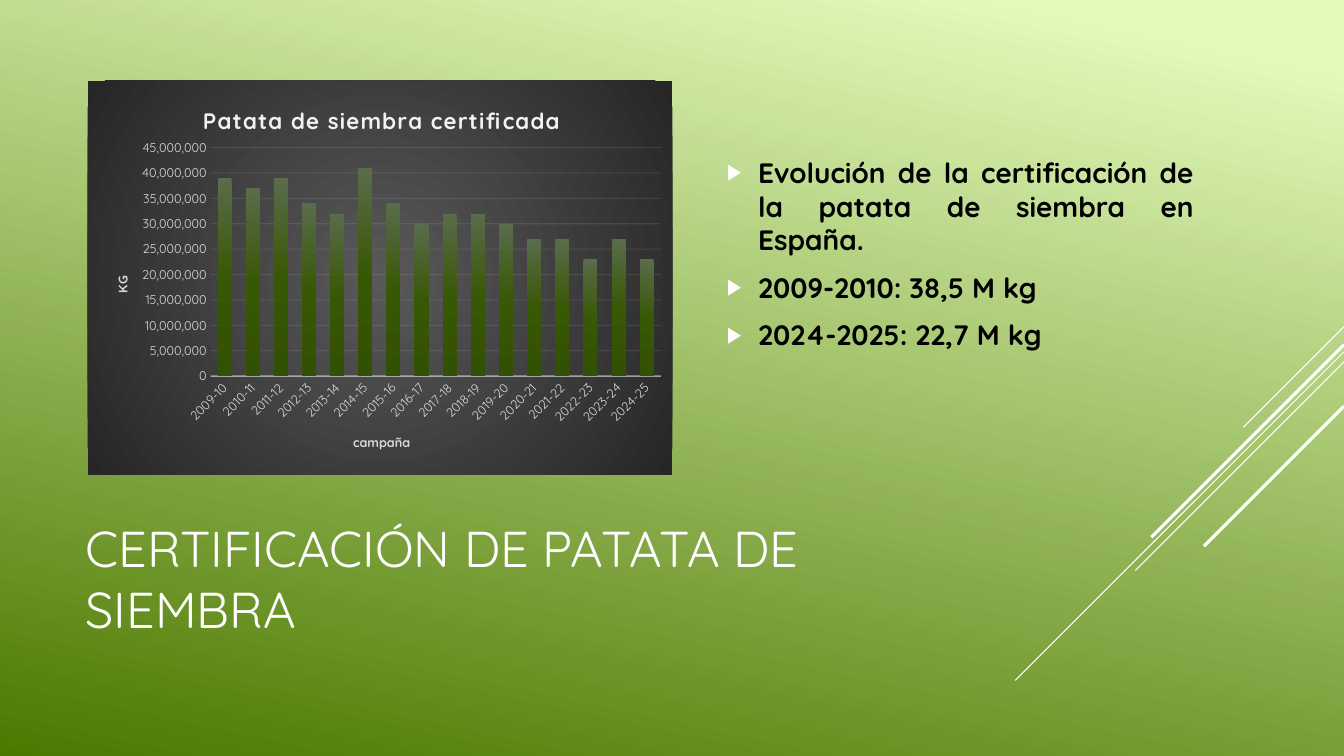
from lxml import etree
from pptx import Presentation
from pptx.chart.data import CategoryChartData
from pptx.dml.color import RGBColor
from pptx.enum.chart import XL_CHART_TYPE, XL_TICK_MARK
from pptx.enum.shapes import MSO_CONNECTOR
from pptx.enum.text import MSO_ANCHOR, MSO_AUTO_SIZE, PP_ALIGN
from pptx.oxml import parse_xml
from pptx.oxml.ns import nsdecls, qn
from pptx.util import Inches, Pt

COLUMNS = XL_CHART_TYPE.COLUMN_CLUSTERED
NO_TICK = XL_TICK_MARK.NONE
STRAIGHT = MSO_CONNECTOR.STRAIGHT
MIDDLE = MSO_ANCHOR.MIDDLE
NO_FIT = MSO_AUTO_SIZE.NONE
LEFT, JUSTIFY = PP_ALIGN.LEFT, PP_ALIGN.JUSTIFY

FONT = "Quicksand"
COLORS = {
    "white": "FFFFFF", "black": "000000", "pale": "F2F2F2", "label": "D9D9D9",
    "lime": "E2F9BA", "green": "4C7800", "gray": "595959", "charcoal": "262626",
    "bar_top": "5A6C4B", "bar_middle": "395806", "bar_bottom": "335102",
}
SLIDE_WIDTH = 13.33
DIAGONALS = [(3.24, 1.0, 0.75), (3.49, 3.26, 0.75), (3.59, 2.07, 0.75),
             (3.42, 1.91, 2.25), (4.03, 1.39, 2.25)]
BULLETS = ["Evolución de la certificación de la patata de siembra en España.",
           "2009-2010: 38,5 M kg", "2024-2025: 22,7 M kg"]
MILLIONS = [39, 37, 39, 34, 32, 41, 34, 30, 32, 32, 30, 27, 27, 23, 27, 23]


def rgb(name):
    """Return a named colour."""
    return RGBColor.from_string(COLORS[name])


def style_font(font, size, color, bold=False):
    """Set the typeface, size, colour and weight of a font."""
    font.name, font.size, font.bold = FONT, Pt(size), bold
    font.color.rgb = rgb(color)


def style_line(line, color, width, alpha):
    """Set a line's colour, width and opacity in percent."""
    line.color.rgb = rgb(color)
    line.width = Pt(width)
    tint = line._get_or_add_ln().find(".//" + qn("a:srgbClr"))
    etree.SubElement(tint, qn("a:alpha"), val=str(alpha * 1000))


def gradient(stops, shade):
    """Build a gradient fill from position and colour pairs."""
    marks = "".join(f'<a:gs pos="{position * 1000}"><a:srgbClr val="{COLORS[name]}"/></a:gs>'
                    for position, name in stops)
    return parse_xml(f'<a:gradFill {nsdecls("a")} rotWithShape="1">'
                     f"<a:gsLst>{marks}</a:gsLst>{shade}</a:gradFill>")


def paint_background(page):
    """Fill the slide with the green gradient."""
    fill = page.background.fill
    fill.gradient()
    fill.gradient_angle = 258
    for stop, position, name in zip(fill.gradient_stops, (0.07, 1), ("lime", "green")):
        stop.position = position
        stop.color.rgb = rgb(name)


def add_diagonal(page, top, reach, width):
    """Draw a 45 degree line down from the right edge."""
    line = page.shapes.add_connector(
        STRAIGHT, Inches(SLIDE_WIDTH), Inches(top),
        Inches(SLIDE_WIDTH - reach), Inches(top + reach))
    line.line.color.rgb = rgb("white")
    line.line.width = Pt(width)
    etree.SubElement(line._element.spPr, qn("a:effectLst"))


def place_box(box, left, top, width, height):
    """Move a placeholder and prepare its text frame."""
    box.left, box.top = Inches(left), Inches(top)
    box.width, box.height = Inches(width), Inches(height)
    frame = box.text_frame
    frame.auto_size, frame.word_wrap = NO_FIT, True
    frame.vertical_anchor = MIDDLE
    return frame


def fill_title(box):
    """Write the slide title."""
    frame = place_box(box, 0.75, 4.91, 9.33, 1.65)
    frame.text = "CERTIFICACIÓN DE PATATA DE SIEMBRA"
    para = frame.paragraphs[0]
    para.alignment = LEFT
    style_font(para.font, 36, "white")


def fill_list(box):
    """Write the bulleted list."""
    frame = place_box(box, 7.11, 0.8, 4.83, 3.91)
    frame.margin_bottom = Inches(0.53)
    frame.text = "\n".join(BULLETS)
    for para in frame.paragraphs:
        para.alignment = JUSTIFY
        para.space_before, para.space_after = Pt(4), Pt(6)
        style_font(para.font, 20, "black", True)
        props = para._p.get_or_add_pPr()
        props.set("marL", str(Inches(0.31)))
        props.set("indent", str(Inches(-0.31)))
        bullet = parse_xml(
            f'<a:pPr {nsdecls("a")}><a:buClr><a:srgbClr val="{COLORS["white"]}"/></a:buClr>'
            '<a:buSzPct val="80000"/><a:buFont typeface="Arial"/><a:buChar char="▶"/></a:pPr>')
        for offset, part in enumerate(list(bullet)):
            props.insert(props.index(props.find(qn("a:defRPr"))) + 0 if offset < 0
                         else len(props) - 1, part)


def set_layout(parent, index, inner="", **fractions):
    """Give a chart part a fixed place in fractions of the chart."""
    for old in parent.findall(qn("c:layout")):
        parent.remove(old)
    modes = "".join(f'<c:{key}Mode val="edge"/>' for key in "xy")
    values = "".join(f'<c:{key} val="{value}"/>' for key, value in fractions.items())
    parent.insert(index, parse_xml(
        f'<c:layout {nsdecls("c")}><c:manualLayout>{inner}{modes}{values}'
        "</c:manualLayout></c:layout>"))


def write_chart_title(title, text, size, color, x, y):
    """Write and place a title of the chart or an axis."""
    frame = title.text_frame
    frame.text = text
    style_font(frame.paragraphs[0].font, size, color, True)
    set_layout(title._element, 1, x=x, y=y)
    return frame


def style_axis(axis):
    """Set the ticks and labels of an axis."""
    axis.major_tick_mark = axis.minor_tick_mark = NO_TICK
    style_font(axis.tick_labels.font, 9, "label")


def add_harvest_chart(page):
    """Add the column chart of certified seed potatoes."""
    data = CategoryChartData(number_format="#,##0")
    data.categories = [f"{year}-{year % 100 + 1:02}" for year in range(2009, 2025)]
    data.add_series("Series 1", [value * 1000000 for value in MILLIONS])
    chart = page.shapes.add_chart(
        COLUMNS, Inches(0.87), Inches(0.8), Inches(5.8), Inches(3.91), data).chart
    chart.has_legend = False
    style_font(chart.font, 10, "white")
    area = parse_xml(f'<c:spPr {nsdecls("c", "a")}><a:ln><a:noFill/></a:ln></c:spPr>')
    area.insert(0, gradient(
        [(0, "gray"), (100, "charcoal")],
        '<a:path path="circle"><a:fillToRect l="50000" t="50000" r="50000" b="50000"/></a:path>'))
    chart._chartSpace.chart.addnext(area)

    heading = write_chart_title(
        chart.chart_title, "Patata de siembra certificada", 16, "pale", 0.19, 0.05)
    heading.paragraphs[0].runs[0]._r.get_or_add_rPr().set("spc", "100")

    plot = chart.plots[0]
    plot.gap_width, plot.overlap, plot.vary_by_categories = 100, -24, False
    series = plot.series[0]
    series.invert_if_negative = False
    series._element.get_or_add_spPr().append(gradient(
        [(0, "bar_top"), (50, "bar_middle"), (100, "bar_bottom")],
        '<a:lin ang="5400000" scaled="0"/>'))

    seasons, kilos = chart.category_axis, chart.value_axis
    style_axis(seasons)
    style_line(seasons.format.line, "pale", 1, 54)
    seasons._element.get_or_add_txPr().bodyPr.set("rot", "-2700000")
    write_chart_title(seasons.axis_title, "campaña", 9, "label", 0.45, 0.89)

    style_axis(kilos)
    kilos.minimum_scale, kilos.maximum_scale, kilos.major_unit = 0, 45000000, 5000000
    kilos.tick_labels.number_format = "#,##0"
    kilos.tick_labels.number_format_is_linked = False
    kilos.format.line.fill.background()
    style_line(kilos.major_gridlines.format.line, "pale", 0.75, 10)
    frame = write_chart_title(kilos.axis_title, "KG", 9, "label", 0.04, 0.49)
    frame._txBody.bodyPr.set("rot", "-5400000")
    frame._txBody.bodyPr.set("vert", "horz")
    set_layout(chart._chartSpace.chart.plotArea, 0, '<c:layoutTarget val="inner"/>',
               x=0.21, y=0.17, w=0.77, h=0.58)


def main():
    """Build the slide and save it."""
    deck = Presentation()
    deck.slide_width, deck.slide_height = Inches(SLIDE_WIDTH), Inches(7.5)
    page = deck.slides.add_slide(deck.slide_layouts[1])
    paint_background(page)
    for top, reach, width in DIAGONALS:
        add_diagonal(page, top, reach, width)
    fill_title(page.shapes.title)
    fill_list(page.placeholders[1])
    add_harvest_chart(page)
    deck.save("out.pptx")


if __name__ == "__main__":
    main()
